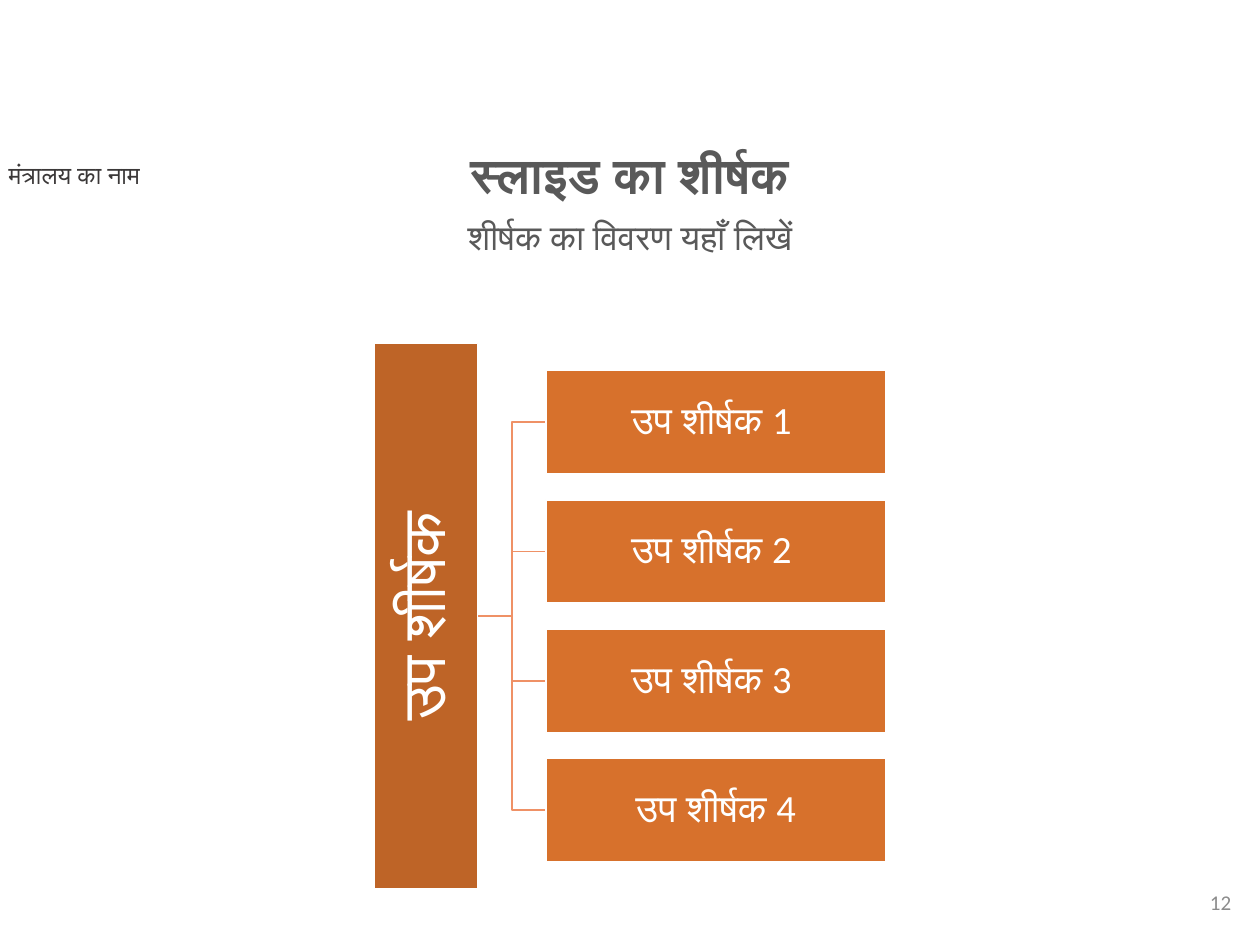
from pptx import Presentation
from pptx.dml.color import RGBColor as Rgb
from pptx.enum.shapes import MSO_SHAPE as Kind
from pptx.enum.text import MSO_ANCHOR as Anchor, PP_ALIGN as Align
from pptx.util import Pt

HUES = {"dark": "3B3838", "grey": "595959", "page": "8C8C8C", "white": "FFFFFF",
        "root": "BE6427", "leaf": "D7712C", "link": "EF9166"}


def tint(name):
    """Return the named colour."""
    return Rgb.from_string(HUES[name])


def write(frame, text, size, hue, align=Align.LEFT, bold=False, space=None):
    """Put one styled line of text in a frame."""
    frame.word_wrap = True
    para = frame.paragraphs[0]
    para.alignment = align
    para.line_spacing = space
    run = para.add_run()
    run.text = text
    font = run.font
    font.name, font.size, font.bold = "Calibri", Pt(size), bold
    font.color.rgb = tint(hue)


def label(slide, box, text, size, hue, **style):
    """Add a text box and return its frame."""
    frame = slide.shapes.add_textbox(*map(Pt, box)).text_frame
    write(frame, text, size, hue, **style)
    return frame


def block(slide, box, text, size, hue, turn=0):
    """Add a filled block with centred text."""
    shape = slide.shapes.add_shape(Kind.RECTANGLE, *map(Pt, box))
    shape.shadow.inherit = False
    shape.rotation = turn
    shape.fill.solid()
    shape.fill.fore_color.rgb = tint(hue)
    shape.line.color.rgb = tint("white")
    shape.line.width = Pt(1)
    frame = shape.text_frame
    frame.vertical_anchor = Anchor.MIDDLE
    inset = Pt(size / 16)
    frame.margin_left = frame.margin_right = inset
    frame.margin_top = frame.margin_bottom = inset
    write(frame, text, size, "white", align=Align.CENTER, space=0.9)


def elbow(slide, start, end):
    """Draw a bent link between two points."""
    (left, top), (right, low) = start, end
    mid = (left + right) / 2
    pen = slide.shapes.build_freeform(Pt(left), Pt(top))
    pen.add_line_segments([(Pt(x), Pt(y)) for x, y in
                           ((mid, top), (mid, low), (right, low))], close=False)
    shape = pen.convert_to_shape()
    shape.shadow.inherit = False
    shape.fill.background()
    shape.line.color.rgb = tint("link")
    shape.line.width = Pt(1)


def tree(slide, box, root, leaves):
    """Draw a turned root block linked to a column of leaves."""
    left, top, width, height = box
    thick, gap, step = 59.1, 39, 73.9
    mid = top + height / 2
    edge = left + thick
    start = edge + gap
    rows = [mid + (i - (len(leaves) - 1) / 2) * step for i in range(len(leaves))]
    for y in reversed(rows):
        elbow(slide, (edge, mid), (start, y))
    turned = (left + (thick - height) / 2, mid - thick / 2, height, thick)
    block(slide, turned, root, 35, "root", turn=270)
    for y, text in zip(rows, leaves):
        leaf = (start, y - thick / 2, left + width - start, thick)
        block(slide, leaf, text, 22, "leaf")


def header(slide, box):
    """Place the ministry name, title and subtitle."""
    left, top, width, height = box
    label(slide, (left - 2.2, top + 5, 157, 24.5), "मंत्रालय का नाम", 14, "dark")
    mid = left + width / 2
    label(slide, (mid - 254.5, top + 39.6, 509, 45.4), "शीर्षक का विवरण यहाँ लिखें",
          20, "grey", align=Align.CENTER, space=0.9)
    label(slide, (mid - 226.5, top, 453, 33.8), "स्लाइड का शीर्षक",
          28, "grey", align=Align.CENTER, bold=True, space=0.9)


def footer(slide, box):
    """Place the page number."""
    frame = label(slide, box, "12", 12, "page", align=Align.RIGHT)
    frame.vertical_anchor = Anchor.MIDDLE


def main():
    """Build and save the slide."""
    deck = Presentation()
    deck.slide_width, deck.slide_height = Pt(720), Pt(540)
    slide = deck.slides.add_slide(deck.slide_layouts[6])
    header(slide, (0, 82.8, 720, 85))
    footer(slide, (548.6, 501.1, 162, 28.8))
    tree(slide, (213.8, 196.2, 292.4, 311.8), "उप शीर्षक",
         ["उप शीर्षक 1 ", "उप शीर्षक 2 ", "उप शीर्षक 3 ", "उप शीर्षक 4"])
    deck.save("out.pptx")


if __name__ == "__main__":
    main()
